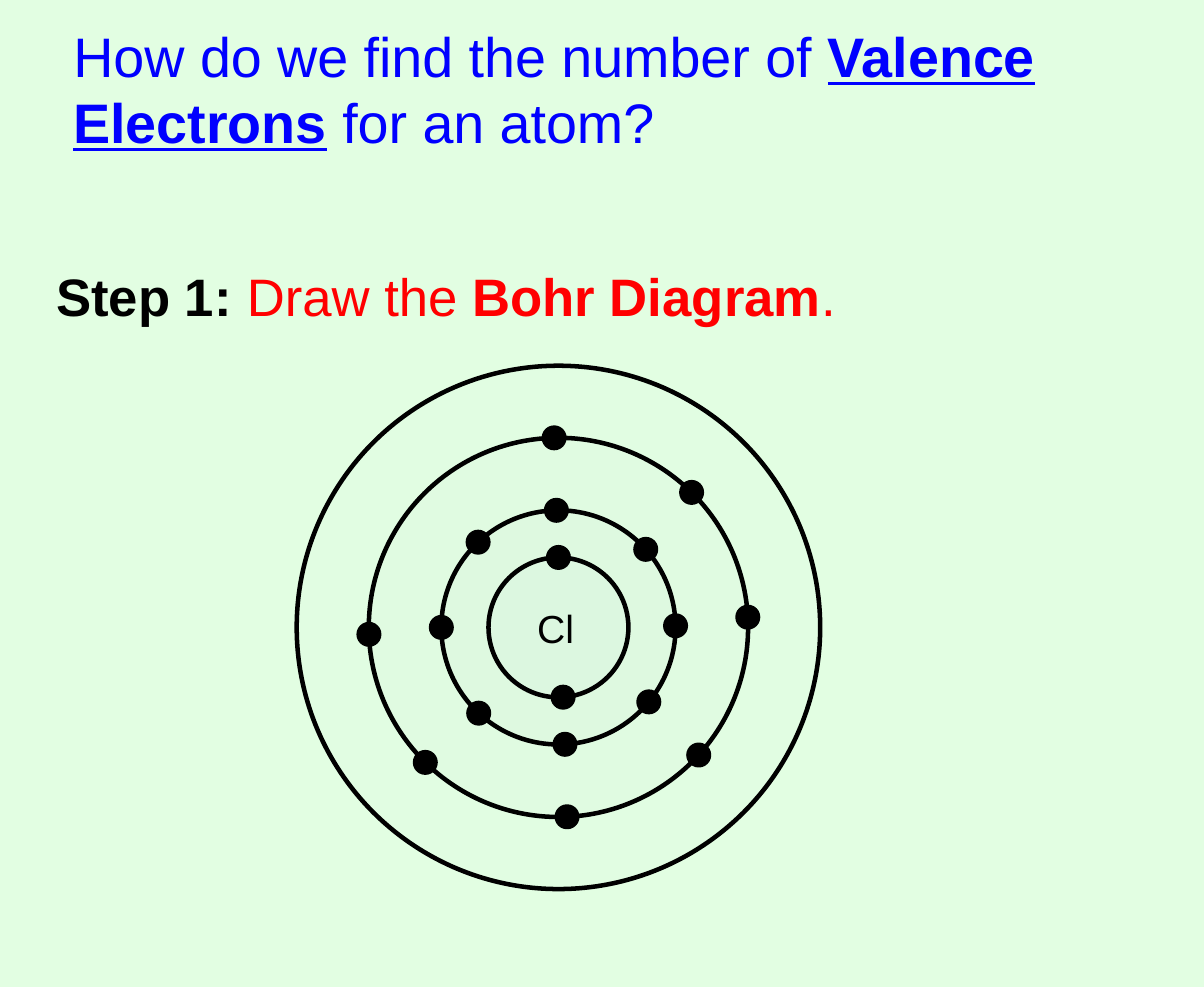
from dataclasses import dataclass
from math import cos, radians, sin

from pptx import Presentation
from pptx import util as u
from pptx.dml import color
from pptx.enum import shapes, text

BLACK, BLUE, RED = "000000", "0000FF", "FF0000"
CENTRE_X, CENTRE_Y = 13.09, 14.71
ELECTRON_SIZE = 0.48


@dataclass
class Span:
    words: str
    colour: str
    bold: bool = False
    underline: bool = False


@dataclass
class Label:
    left: float
    top: float
    width: float
    height: float
    size: int
    spans: list[Span]


@dataclass
class Shell:
    diameter: float
    tint: str
    angles: tuple[float, ...]  # degrees clockwise from the top


HEADINGS = [
    Label(1.47, 0.38, 26.24, 3.43, 37, [
        Span("How do we find the number of ", BLUE),
        Span("Valence Electrons", BLUE, bold=True, underline=True),
        Span(" for an atom?", BLUE),
    ]),
    Label(1.07, 6.07, 25.15, 1.75, 35, [
        Span("Step 1: ", BLACK, bold=True),
        Span("Draw the ", RED),
        Span("Bohr Diagram", RED, bold=True),
        Span(".", RED),
    ]),
]
SYMBOL = Label(12.34, 14.05, 1.55, 1.37, 26, [Span("Cl", BLACK)])

SHELLS = [
    Shell(12.27, "E1FDE2", ()),
    Shell(8.89, "E0FBE1", (358.7, 44.6, 86.9, 132.3, 177.4, 224.6, 267.9)),
    Shell(5.49, "DEF9E0", (359, 48.2, 89.2, 129.5, 176.8, 222.9, 270, 316.7)),
    Shell(3.28, "DCF7E0", (0, 176.2)),
]


def rgb(colour: str) -> color.RGBColor:
    return color.RGBColor.from_string(colour)


def add_label(parent, label: Label) -> None:
    box = parent.add_textbox(u.Cm(label.left), u.Cm(label.top),
                             u.Cm(label.width), u.Cm(label.height))
    frame = box.text_frame
    frame.word_wrap = True
    frame.auto_size = text.MSO_AUTO_SIZE.SHAPE_TO_FIT_TEXT
    para = frame.paragraphs[0]
    para.font.name = "Arial"
    para.font.size = u.Pt(label.size)
    for span in label.spans:
        run = para.add_run()
        run.text = span.words
        run.font.color.rgb = rgb(span.colour)
        run.font.bold = span.bold
        run.font.underline = span.underline


def add_circle(parent, x: float, y: float, diameter: float, fill: str) -> None:
    circle = parent.add_shape(shapes.MSO_SHAPE.OVAL,
                              u.Cm(x - diameter / 2), u.Cm(y - diameter / 2),
                              u.Cm(diameter), u.Cm(diameter))
    circle.shadow.inherit = False
    circle.fill.solid()
    circle.fill.fore_color.rgb = rgb(fill)
    circle.line.color.rgb = rgb(BLACK)
    circle.line.width = u.Pt(3)


def add_electrons(parent, shell: Shell) -> None:
    radius = shell.diameter / 2
    for angle in shell.angles:
        turn = radians(angle)
        add_circle(parent, CENTRE_X + radius * sin(turn),
                   CENTRE_Y - radius * cos(turn), ELECTRON_SIZE, BLACK)


def main() -> None:
    deck = Presentation()
    deck.slide_width, deck.slide_height = u.Cm(28.22), u.Cm(23.14)
    page = deck.slides.add_slide(deck.slide_layouts[6])
    page.background.fill.solid()
    page.background.fill.fore_color.rgb = rgb("E2FEE2")

    # Question and step
    for heading in HEADINGS:
        add_label(page.shapes, heading)

    # Bohr diagram: shells from the outside in, symbol, electrons
    diagram = page.shapes.add_group_shape().shapes
    for shell in SHELLS:
        add_circle(diagram, CENTRE_X, CENTRE_Y, shell.diameter, shell.tint)
    add_label(diagram, SYMBOL)
    for shell in SHELLS:
        add_electrons(diagram, shell)

    deck.save("out.pptx")


if __name__ == "__main__":
    main()
